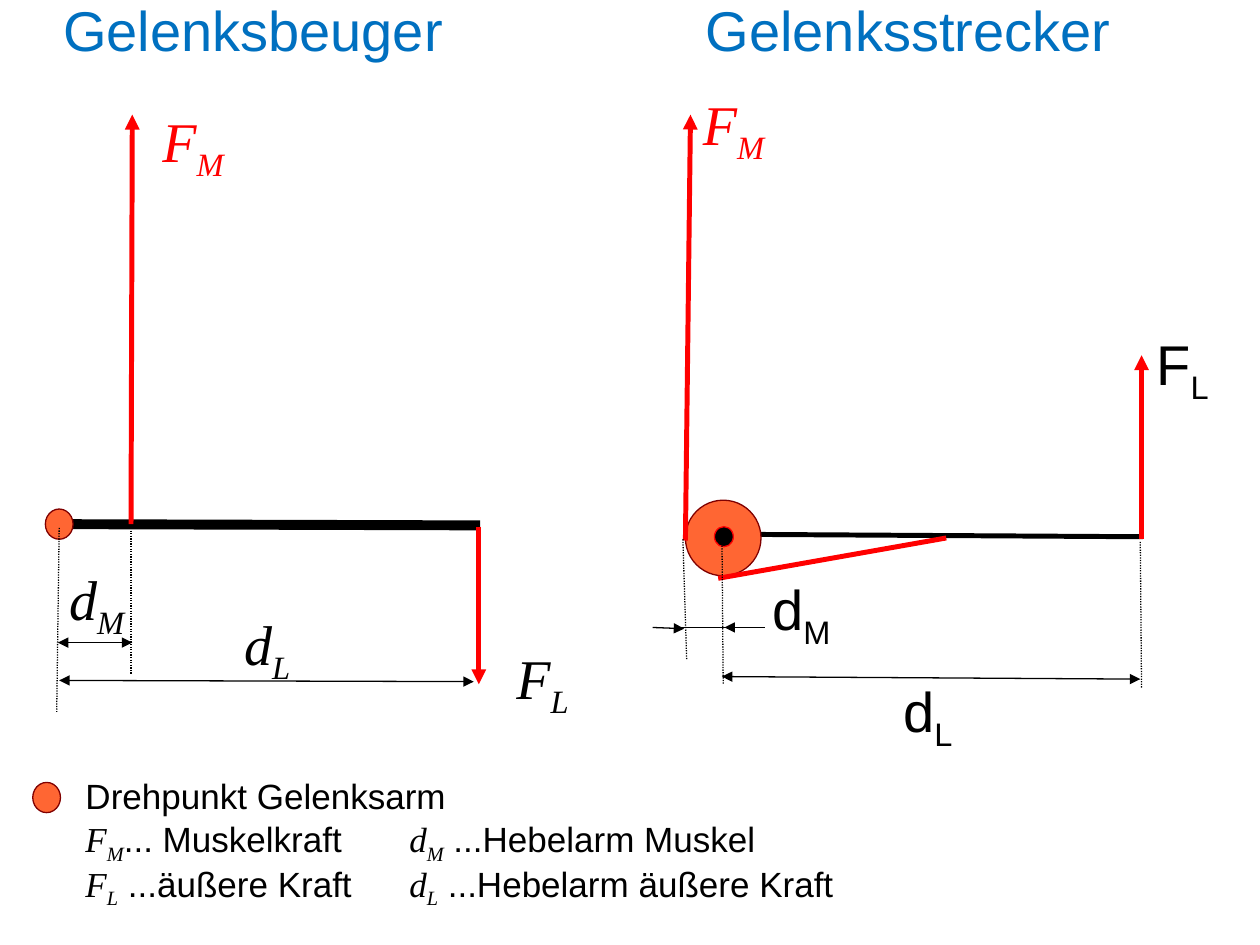
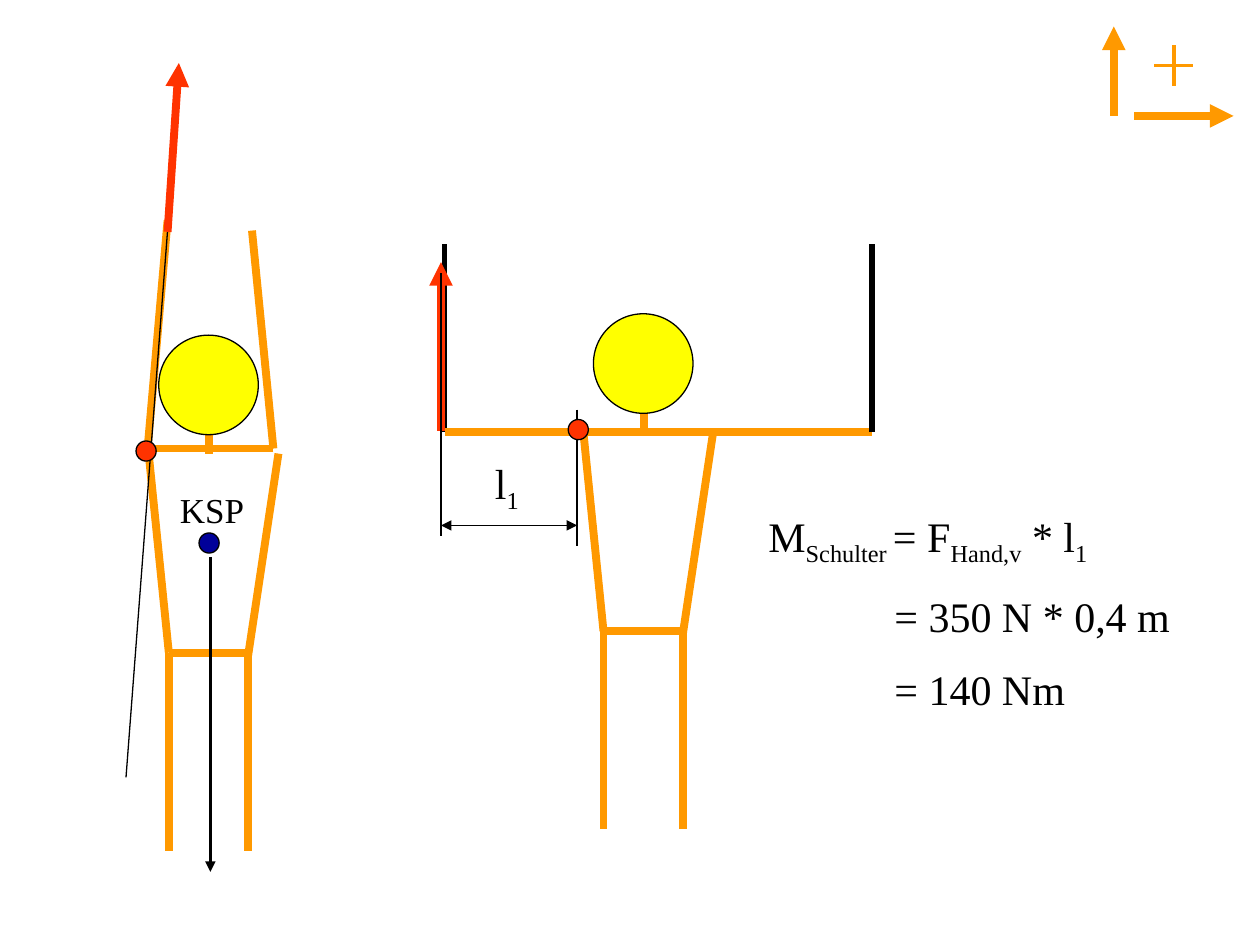
from lxml import etree
from pptx import Presentation
from pptx.dml.color import RGBColor
from pptx.enum import dml, shapes, text
from pptx.oxml.ns import qn
from pptx.util import Inches, Pt

COLOURS = {
    "black": "000000", "red": "FF0000", "title": "0070C0", "joint": "FF6633",
    "maroon": "800000", "body": "FF9900", "head": "FFFF00", "force": "FF3300",
    "navy": "000099",
}
SANS, SERIF = "Arial", "Times New Roman"

# Line styles: colour, width in points, dotted
STYLES = {
    "thick bar": ("black", 5.67, False),
    "bar": ("black", 2.83, False),
    "muscle": ("red", 2.83, False),
    "guide": ("black", 0.75, True),
    "dimension": ("black", 0.75, False),
    "limb": ("body", 4.5, False),
    "plus": ("body", 2.25, False),
    "forearm": ("black", 3, False),
    "hand force": ("force", 4.5, False),
    "weight": ("black", 1.5, False),
}
ARROWS = {"": (), "start": ("headEnd",), "end": ("tailEnd",),
          "both": ("headEnd", "tailEnd")}

# ---- Slide 1: levers. Lines: style, x1, y1, x2, y2, arrow ----
LEVER_TITLE = [[("Gelenksbeuger\tGelenksstrecker", "")]]
LEVER_BARS = [
    ("thick bar", 3.81, 4.17, 0.46, 4.16, ""),
    ("bar", 9.07, 4.26, 5.72, 4.24, ""),
]
# Circles: fill, outline, left, top, width, height
PIVOTS = [
    ("joint", "maroon", 0.36, 4.04, 0.22, 0.24),
    ("joint", "maroon", 0.26, 6.21, 0.22, 0.24),
    ("joint", "maroon", 5.44, 3.97, 0.6, 0.6),
    ("black", "red", 5.67, 4.18, 0.15, 0.16),
]
LEVER_LINES = [
    # flexor
    ("muscle", 1.04, 4.16, 1.05, 0.91, "end"),
    ("muscle", 3.8, 4.18, 3.8, 5.43, "end"),
    ("guide", 0.47, 4.19, 0.45, 5.65, ""),
    ("guide", 1.04, 4.17, 1.04, 5.35, ""),
    ("dimension", 0.46, 5.1, 1.05, 5.1, "both"),
    ("dimension", 0.47, 5.4, 3.76, 5.41, "both"),
    # extensor
    ("muscle", 5.44, 4.29, 5.48, 0.91, "end"),
    ("muscle", 9.06, 4.28, 9.06, 2.82, "end"),
    ("muscle", 5.7, 4.59, 7.51, 4.27, ""),
    ("guide", 5.42, 4.28, 5.45, 5.24, ""),
    ("guide", 5.73, 4.29, 5.74, 5.43, ""),
    ("guide", 9.05, 4.3, 9.06, 5.46, ""),
    ("dimension", 5.75, 4.98, 6.07, 4.98, "start"),
    ("dimension", 5.36, 4.98, 6.06, 4.98, ""),
    ("dimension", 5.18, 4.98, 5.43, 4.99, "end"),
    ("dimension", 5.73, 5.37, 9.05, 5.39, "both"),
]
# Symbols: letter, index, left, top, serif italic, colour
SYMBOLS = [
    ("F", "M", 1.19, 0.8, True, "red"),
    ("F", "L", 4, 5.06, True, "black"),
    ("d", "M", 0.45, 4.43, True, "black"),
    ("d", "L", 1.84, 4.79, True, "black"),
    ("F", "L", 9.08, 2.57, False, "black"),
    ("d", "M", 6.03, 4.51, False, "black"),
    ("d", "L", 7.07, 5.32, False, "black"),
    ("F", "M", 5.48, 0.66, True, "red"),
]
# Runs: text, marks (i = serif italic, s = subscript)
LEGEND = [
    [("Drehpunkt Gelenksarm", "")],
    [("F", "i"), ("M", "is"), ("... Muskelkraft\t", ""),
     ("d", "i"), ("M", "is"), (" ...Hebelarm Muskel", "")],
    [("F", "i"), ("L", "is"), (" ...äußere Kraft\t", ""),
     ("d", "i"), ("L", "is"), (" ...Hebelarm äußere Kraft", "")],
]

# ---- Slide 2: shoulder moment ----
NECKS = [(5.11, 3.43), (1.66, 3.6)]
HEAD_SIZE, MARK_SIZE = 0.79, 0.16
# Torso and legs, measured from the base of the neck
FIGURE = [
    (-0.48, 0, -0.32, 1.58), (0.55, 0, 0.31, 1.6), (0, -0.15, 0, 0),
    (0.31, 1.58, -0.32, 1.58), (-0.32, 1.58, -0.32, 3.15),
    (0.31, 1.58, 0.31, 3.15),
]
SHOULDER_LINES = [
    # positive directions
    ("limb", 9, 0.92, 9.79, 0.92, "end"),
    ("limb", 8.84, 0.92, 8.84, 0.21, "end"),
    ("plus", 9.32, 0.36, 9.32, 0.68, ""),
    ("plus", 9.16, 0.52, 9.47, 0.52, ""),
    # arms held sideways
    ("forearm", 3.53, 3.43, 3.53, 1.94, ""),
    ("limb", 6.92, 3.43, 3.53, 3.43, ""),
    ("forearm", 6.92, 3.43, 6.92, 1.94, ""),
    # arms raised
    ("limb", 2.17, 3.56, 1.17, 3.56, ""),
    ("limb", 1.33, 1.75, 1.17, 3.58, ""),
    ("limb", 2, 1.83, 2.17, 3.56, ""),
    # forces and lever arm
    ("dimension", 1.33, 1.83, 1, 6.17, ""),
    ("hand force", 1.33, 1.84, 1.42, 0.5, "end"),
    ("hand force", 3.5, 3.42, 3.5, 2.08, "end"),
    ("dimension", 3.5, 2.17, 3.5, 4.25, ""),
    ("dimension", 4.58, 4.17, 3.5, 4.17, "both"),
    ("weight", 1.67, 4.42, 1.67, 6.92, "end"),
    ("dimension", 4.58, 3.25, 4.58, 4.33, ""),
]
MARKS = [("navy", 1.58, 4.23), ("force", 1.08, 3.5), ("force", 4.51, 3.33)]
CENTRE_LABEL = [[("KSP", "")]]
ARM_LABEL = [[("l", ""), ("1", "s")]]
MOMENT = [
    [("M", ""), ("Schulter ", "s"), ("= F", ""), ("Hand,v", "s"),
     (" * l", ""), ("1", "s")],
    [("\t= 350 N * 0,4 m", "")],
    [("\t= 140 Nm", "")],
]


def rgb(name):
    return RGBColor.from_string(COLOURS[name])


def draw_line(slide, style, x1, y1, x2, y2, arrow=""):
    colour, width, dotted = STYLES[style]
    stroke = slide.shapes.add_connector(
        shapes.MSO_CONNECTOR.STRAIGHT, *map(Inches, (x1, y1, x2, y2)))
    stroke.line.color.rgb = rgb(colour)
    stroke.line.width = Pt(width)
    if dotted:
        stroke.line.dash_style = dml.MSO_LINE.ROUND_DOT
    properties = stroke.line._get_or_add_ln()
    for end in ARROWS[arrow]:
        etree.SubElement(properties, qn("a:" + end), type="triangle")
    etree.SubElement(stroke._element.spPr, qn("a:effectLst"))


def draw_circle(slide, fill, outline, left, top, width, height):
    disc = slide.shapes.add_shape(
        shapes.MSO_SHAPE.OVAL, *map(Inches, (left, top, width, height)))
    disc.shadow.inherit = False
    disc.fill.solid()
    disc.fill.fore_color.rgb = rgb(fill)
    disc.line.color.rgb = rgb(outline)
    disc.line.width = Pt(0.75)


def write(frame, paragraphs, size, font, colour="black", spacing=None,
          before=0, tab=None, wrap=True):
    """Fill a frame with paragraphs, each a list of marked runs."""
    frame.word_wrap = wrap
    frame.auto_size = text.MSO_AUTO_SIZE.NONE
    frame.vertical_anchor = text.MSO_ANCHOR.TOP
    for i, runs in enumerate(paragraphs):
        paragraph = frame.paragraphs[0] if i == 0 else frame.add_paragraph()
        if tab:
            stops = etree.SubElement(
                paragraph._p.get_or_add_pPr(), qn("a:tabLst"))
            etree.SubElement(
                stops, qn("a:tab"), pos=str(Inches(tab)), algn="l")
        paragraph.alignment = text.PP_ALIGN.LEFT
        paragraph.line_spacing = spacing
        paragraph.space_before = Pt(before if i else 0)
        for words, marks in runs:
            run = paragraph.add_run()
            run.text = words
            run.font.size = Pt(size)
            run.font.name = SERIF if "i" in marks else font
            run.font.italic = "i" in marks
            run.font.color.rgb = rgb(colour)
            if "s" in marks:
                run._r.get_or_add_rPr().set("baseline", "-25000")


def add_text(slide, place, paragraphs, *args, **options):
    box = slide.shapes.add_textbox(*map(Inches, place))
    write(box.text_frame, paragraphs, *args, **options)


def build_levers(deck):
    slide = deck.slides.add_slide(deck.slide_layouts[5])
    title = slide.shapes.title
    title.left, title.top, title.width, title.height = map(
        Inches, (0.4, -0.04, 9.6, 0.55))
    title.text_frame.margin_bottom = 0
    write(title.text_frame, LEVER_TITLE, 32, SANS, "title",
          spacing=0.93, tab=5.1)

    # Bars lie behind the pivots, forces and dimensions in front
    for bar in LEVER_BARS:
        draw_line(slide, *bar)
    for pivot in PIVOTS:
        draw_circle(slide, *pivot)
    for line in LEVER_LINES:
        draw_line(slide, *line)

    for letter, index, left, top, italic, colour in SYMBOLS:
        mark = "i" if italic else ""
        add_text(slide, (left, top, 0.8, 0.67),
                 [[(letter, mark), (index, mark + "s")]],
                 32, SANS, colour, spacing=0.93)
    add_text(slide, (0.58, 6.13, 8.08, 0.99), LEGEND, 20, SANS,
             spacing=0.93, tab=2.57)


def build_shoulder(deck):
    slide = deck.slides.add_slide(deck.slide_layouts[6])
    # Two figures with the same torso, legs and head
    for x, y in NECKS:
        for x1, y1, x2, y2 in FIGURE:
            draw_line(slide, "limb", x + x1, y + y1, x + x2, y + y2)
        draw_circle(slide, "head", "black", x - 0.4, y - 0.94,
                    HEAD_SIZE, HEAD_SIZE)
    for line in SHOULDER_LINES:
        draw_line(slide, *line)
    for fill, left, top in MARKS:
        draw_circle(slide, fill, "black", left, top, MARK_SIZE, MARK_SIZE)

    # Labels and calculation
    add_text(slide, (1.33, 3.83, 0.94, 0.43), CENTRE_LABEL, 20, SERIF)
    add_text(slide, (3.83, 3.58, 0.4, 0.5), ARM_LABEL, 24, SERIF, wrap=False)
    add_text(slide, (6, 4, 4, 1.7), MOMENT, 24, SERIF, before=13, tab=1)


def main():
    deck = Presentation()
    deck.slide_width, deck.slide_height = Inches(10), Inches(7.5)
    build_levers(deck)
    build_shoulder(deck)
    deck.save("out.pptx")


if __name__ == "__main__":
    main()
